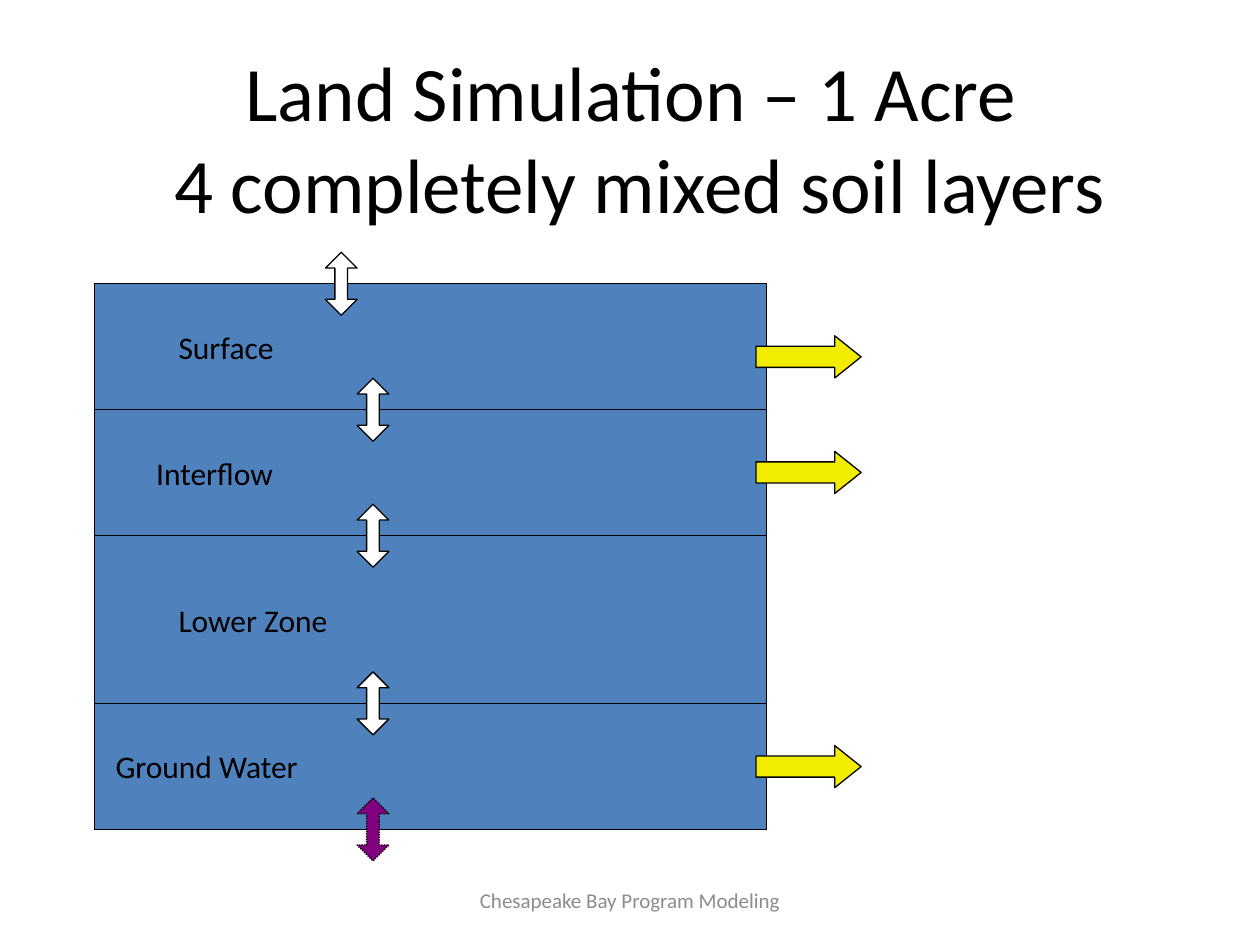
from pptx import Presentation
from pptx.dml.color import RGBColor
from pptx.enum.dml import MSO_LINE
from pptx.enum.shapes import MSO_SHAPE as Shape
from pptx.enum.text import MSO_ANCHOR as Anchor, PP_ALIGN as Align
from pptx.util import Cm, Pt

BLACK = RGBColor(0, 0, 0)
WHITE = RGBColor(255, 255, 255)
GREY = RGBColor(0x8C, 0x8C, 0x8C)
SOIL_BLUE = RGBColor(0x4F, 0x81, 0xBD)
YELLOW = RGBColor(0xF2, 0xEC, 0x00)
PURPLE = RGBColor(0x80, 0x00, 0x80)

COLUMN_LEFT, COLUMN_TOP, COLUMN_WIDTH = 1.9, 5.72, 13.55
LAYERS = [
    ("Surface", 2.54, 1.7),
    ("Interflow", 2.54, 1.25),
    ("Lower Zone", 3.38, 1.7),
    ("Ground Water", 2.54, 0.43),
]
EXCHANGE_WIDTH, EXCHANGE_HEIGHT = 0.64, 1.27
RUNOFF_TOPS = [6.77, 9.1, 15.03]


class SlideBuilder:
    font_name = "Calibri"
    line_width = Pt(0.75)

    def __init__(self, slide):
        self.slide = slide

    def fill_text(self, frame, wording, size, color, align, **frame_format):
        settings = {"vertical_anchor": Anchor.MIDDLE, "word_wrap": True, **frame_format}
        for name, value in settings.items():
            setattr(frame, name, value)
        frame.text = wording
        paragraph = frame.paragraphs[0]
        paragraph.alignment = align
        for run in paragraph.runs:
            for name, value in {"name": self.font_name, "size": Pt(size)}.items():
                setattr(run.font, name, value)
            run.font.color.rgb = color

    def text(self, wording, box, size, color):
        textbox = self.slide.shapes.add_textbox(*map(Cm, box))
        self.fill_text(textbox.text_frame, wording, size, color, Align.CENTER)

    def shape(self, kind, box, fill, adjustments=(), dash=None):
        shape = self.slide.shapes.add_shape(kind, *map(Cm, box))
        shape.shadow.inherit = False
        shape.fill.solid()
        shape.fill.fore_color.rgb = fill
        shape.line.color.rgb = BLACK
        for name, value in {"width": self.line_width, "dash_style": dash}.items():
            setattr(shape.line, name, value)
        for index, value in enumerate(adjustments):
            shape.adjustments[index] = value
        return shape

    def layer(self, label, top, height, indent):
        box = (COLUMN_LEFT, top, COLUMN_WIDTH, height)
        layer = self.shape(Shape.RECTANGLE, box, SOIL_BLUE)
        self.fill_text(layer.text_frame, label, 18, BLACK, Align.LEFT, margin_left=Cm(indent))

    def exchange(self, left, boundary, fill=WHITE, dash=None):
        box = (left, boundary - EXCHANGE_HEIGHT / 2, EXCHANGE_WIDTH, EXCHANGE_HEIGHT)
        self.shape(Shape.UP_DOWN_ARROW, box, fill, (0.5, 0.4), dash)

    def runoff(self, top):
        self.shape(Shape.RIGHT_ARROW, (15.24, top, 2.12, 0.85), YELLOW, (0.5, 0.625))


def main():
    deck = Presentation()
    deck.slide_width, deck.slide_height = Cm(25.4), Cm(19.05)
    builder = SlideBuilder(deck.slides.add_slide(deck.slide_layouts[6]))

    builder.text("Chesapeake Bay Program Modeling", (8.68, 17.65, 8.04, 1.01), 12, GREY)
    builder.text("Land Simulation – 1 Acre \v4 completely mixed soil layers",
                 (1.9, 0.64, 22.01, 4.23), 44, BLACK)

    boundaries = [COLUMN_TOP]
    for label, height, indent in LAYERS:
        builder.layer(label, boundaries[-1], height, indent)
        boundaries.append(boundaries[-1] + height)

    surface, *between, bottom = boundaries
    builder.exchange(6.56, surface)
    for boundary in between:
        builder.exchange(7.2, boundary)
    for top in RUNOFF_TOPS:
        builder.runoff(top)
    builder.exchange(7.2, bottom, PURPLE, MSO_LINE.ROUND_DOT)

    deck.save("out.pptx")


if __name__ == "__main__":
    main()
